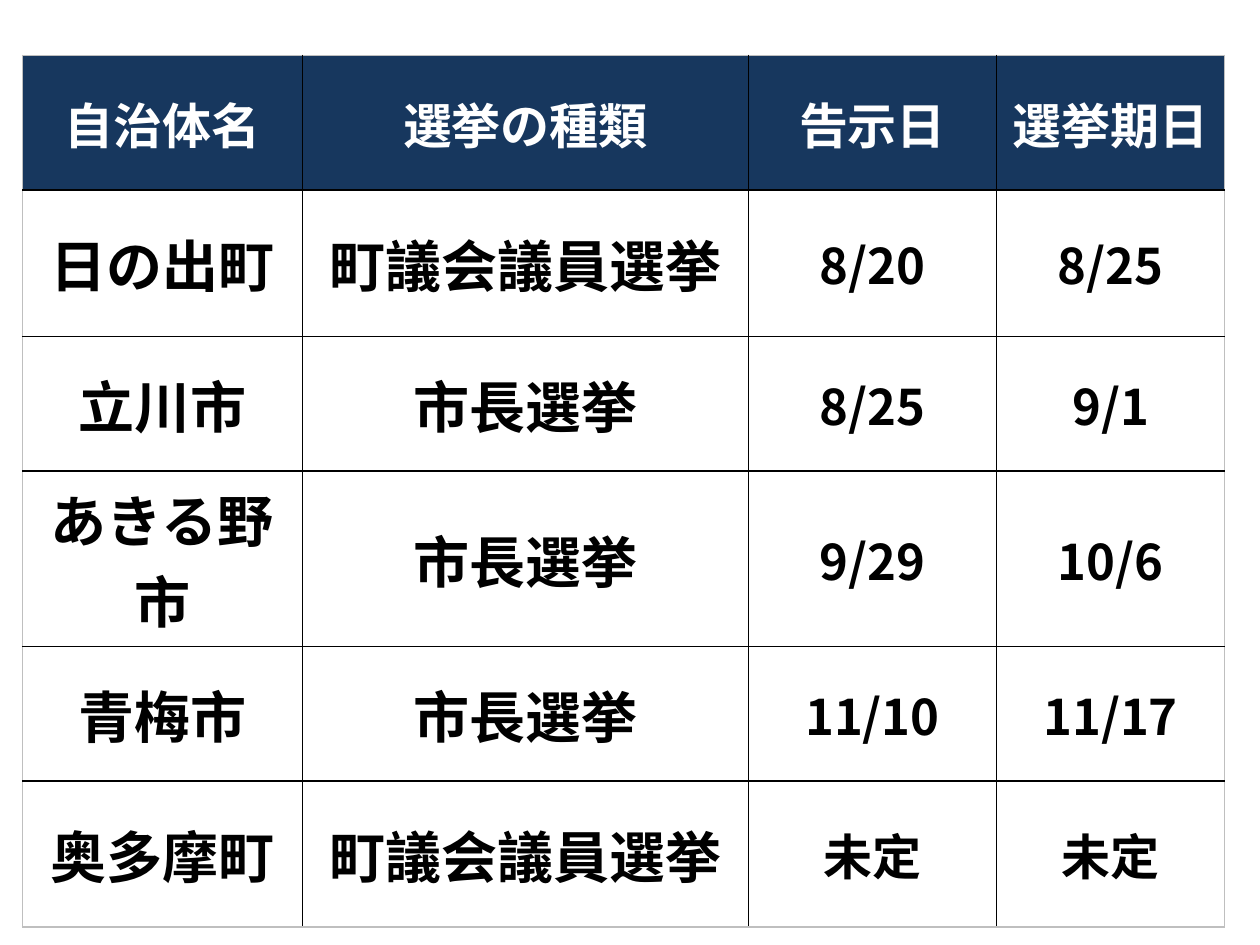
import pptx
import pptx.dml.color
import pptx.enum.text
import pptx.oxml.ns
import pptx.util
from lxml import etree
from pptx.util import Inches

NAVY = pptx.dml.color.RGBColor(0x17, 0x37, 0x5E)
WHITE = pptx.dml.color.RGBColor(0xFF, 0xFF, 0xFF)
BLACK = pptx.dml.color.RGBColor(0x00, 0x00, 0x00)
GRAY = pptx.dml.color.RGBColor(0xBF, 0xBF, 0xBF)
FONT = "Noto Sans CJK JP"
BORDER_WIDTH = pptx.util.Pt(1)

COLUMN_WIDTHS = [2.22, 3.54, 1.97, 1.81]
ROW_HEIGHTS = [1.07, 1.16, 1.07, 1.07, 1.07, 1.16]
ELECTIONS = [
    ["自治体名", "選挙の種類", "告示日", "選挙期日"],
    ["日の出町", "町議会議員選挙", "8/20", "8/25"],
    ["立川市", "市長選挙", "8/25", "9/1"],
    ["あきる野市", "市長選挙", "9/29", "10/6"],
    ["青梅市", "市長選挙", "11/10", "11/17"],
    ["奥多摩町", "町議会議員選挙", "未定", "未定"],
]


def add_border(cell, side, color):
    """Draw one cell edge; side is L, R, T or B. Call before setting the fill."""
    properties = cell._tc.get_or_add_tcPr()
    line = etree.SubElement(
        properties, pptx.oxml.ns.qn(f"a:ln{side}"), w=str(int(BORDER_WIDTH))
    )
    fill = etree.SubElement(line, pptx.oxml.ns.qn("a:solidFill"))
    etree.SubElement(fill, pptx.oxml.ns.qn("a:srgbClr"), val=str(color))


deck = pptx.Presentation()
deck.slide_width, deck.slide_height = Inches(10), Inches(7.5)
page = deck.slides.add_slide(deck.slide_layouts[6])

row_count, column_count = len(ELECTIONS), len(COLUMN_WIDTHS)
frame = page.shapes.add_table(
    row_count, column_count, Inches(0.18), Inches(0.44),
    Inches(sum(COLUMN_WIDTHS)), Inches(sum(ROW_HEIGHTS)),
)
table = frame.table
table.horz_banding = False
for column, width in zip(table.columns, COLUMN_WIDTHS):
    column.width = Inches(width)
for row, height in zip(table.rows, ROW_HEIGHTS):
    row.height = Inches(height)

for row_index, texts in enumerate(ELECTIONS):
    is_header = row_index == 0
    for column_index, text in enumerate(texts):
        cell = table.cell(row_index, column_index)
        outer_edges = {
            "L": column_index == 0,
            "R": column_index == column_count - 1,
            "T": is_header,
            "B": row_index == row_count - 1,
        }
        for side, is_outer in outer_edges.items():
            add_border(cell, side, GRAY if is_outer else BLACK)
        cell.fill.solid()
        cell.fill.fore_color.rgb = NAVY if is_header else WHITE
        cell.vertical_anchor = pptx.enum.text.MSO_ANCHOR.MIDDLE

        para = cell.text_frame.paragraphs[0]
        para.alignment = pptx.enum.text.PP_ALIGN.CENTER
        span = para.add_run()
        span.text = text
        is_name = not is_header and column_index < 2
        font_format = {
            "name": FONT,
            "size": pptx.util.Pt(32 if is_name else 28),
            "bold": True,
        }
        for attribute, value in font_format.items():
            setattr(span.font, attribute, value)
        span.font.color.rgb = WHITE if is_header else BLACK
        etree.SubElement(
            span._r.get_or_add_rPr(), pptx.oxml.ns.qn("a:ea"), typeface=FONT
        )

deck.save("out.pptx")
